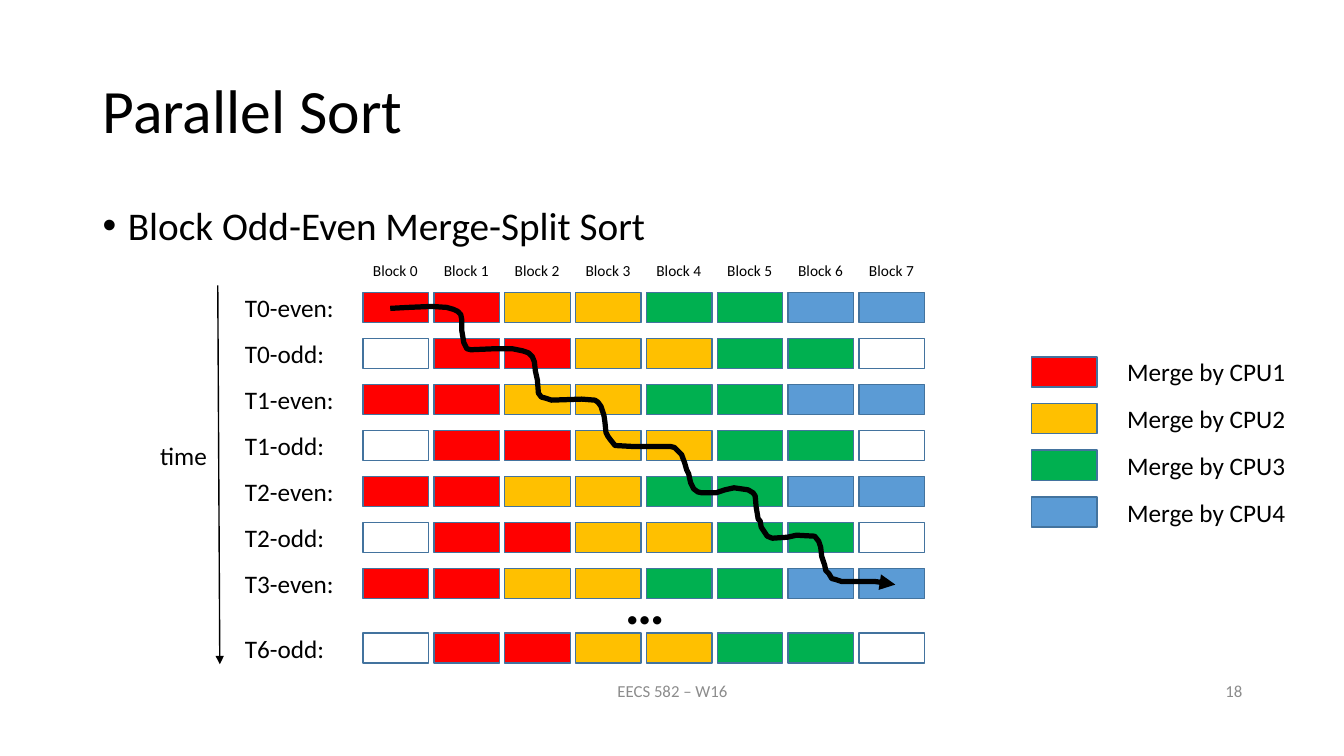
from lxml.etree import SubElement
from pptx import Presentation
from pptx.dml.color import RGBColor
from pptx.enum.shapes import MSO_CONNECTOR as CONNECTOR, MSO_SHAPE as SHAPE
from pptx.enum.text import MSO_ANCHOR as ANCHOR, MSO_AUTO_SIZE as AUTO_SIZE, PP_ALIGN as ALIGN
from pptx.oxml.ns import qn
from pptx.util import Inches, Pt

BLACK, GRAY, WHITE, OUTLINE = "000000", "8C8C8C", "FFFFFF", "43739E"
CPU_COLORS = ["FF0000", "FFC000", "00B050", "5B9BD5"]
BLOCKS = 8
BLOCK_W, BLOCK_H = 0.65, 0.3
BLOCK_PITCH = 4.92 / (BLOCKS - 1)
STEPS = ["T0-even:", "T0-odd:", "T1-even:", "T1-odd:", "T2-even:", "T2-odd:", "T3-even:"]
STEP_PITCH = 2.74 / (len(STEPS) - 1)

# Route of one element from block 0 to block 7, in inches
ROUTE = [
    (3.87, 3.06), (4.05, 3.05), (4.28, 3.04), (4.43, 3.05), (4.5, 3.07), (4.54, 3.09),
    (4.57, 3.12), (4.58, 3.17), (4.58, 3.28), (4.6, 3.4), (4.63, 3.46), (4.67, 3.47),
    (4.91, 3.46), (5.08, 3.46), (5.18, 3.48), (5.24, 3.5), (5.28, 3.54), (5.3, 3.59),
    (5.31, 3.68), (5.33, 3.77), (5.34, 3.9), (5.37, 3.94), (5.41, 3.95), (5.47, 3.97),
    (5.77, 3.96), (5.9, 3.97), (5.93, 3.99), (5.96, 4.03), (5.99, 4.12), (6, 4.19),
    (6.01, 4.29), (6.03, 4.33), (6.06, 4.37), (6.1, 4.42), (6.28, 4.43), (6.65, 4.43),
    (6.69, 4.44), (6.72, 4.47), (6.76, 4.51), (6.79, 4.59), (6.81, 4.66), (6.83, 4.7),
    (6.85, 4.79), (6.88, 4.85), (6.92, 4.88), (6.96, 4.89), (7.1, 4.89), (7.19, 4.86),
    (7.28, 4.84), (7.42, 4.86), (7.47, 4.89), (7.49, 4.92), (7.5, 5.03), (7.52, 5.15),
    (7.54, 5.17), (7.55, 5.23), (7.59, 5.29), (7.61, 5.32), (7.66, 5.34), (7.81, 5.33),
    (7.9, 5.31), (8.08, 5.32), (8.12, 5.37), (8.14, 5.43), (8.15, 5.52), (8.18, 5.61),
    (8.19, 5.66), (8.22, 5.69), (8.25, 5.74), (8.29, 5.75), (8.35, 5.77), (8.68, 5.77),
    (8.83, 5.79), (8.88, 5.8),
]


def rgb(hex_color):
    return RGBColor.from_string(hex_color)


def add_text(shapes, box, text, size, color=BLACK, align=ALIGN.LEFT,
             anchor=ANCHOR.TOP, bold=False, wrap=True, grow=False):
    frame = shapes.add_textbox(*map(Inches, box)).text_frame
    frame.text = text
    frame.word_wrap = wrap
    frame.auto_size = AUTO_SIZE.SHAPE_TO_FIT_TEXT if grow else AUTO_SIZE.NONE
    frame.vertical_anchor = anchor
    paragraph = frame.paragraphs[0]
    paragraph.alignment = align
    font = paragraph.runs[0].font
    font.name, font.size, font.bold = "Calibri", Pt(size), bold
    font.color.rgb = rgb(color)
    return paragraph


def add_block(shapes, left, top, color):
    block = shapes.add_shape(SHAPE.RECTANGLE, *map(Inches, (left, top, BLOCK_W, BLOCK_H)))
    block.shadow.inherit = False
    block.fill.solid()
    block.fill.fore_color.rgb = rgb(color)
    block.line.color.rgb = rgb(OUTLINE)
    block.line.width = Pt(1)


def style_arrow(arrow, width):
    arrow.line.color.rgb = rgb(BLACK)
    arrow.line.width = Pt(width)
    SubElement(arrow.line._get_or_add_ln(), qn("a:tailEnd"), type="triangle")


def add_heading(shapes, left, width):
    title = add_text(shapes, (left, 0.4, width, 1.45), "Parallel Sort", 44, anchor=ANCHOR.MIDDLE)
    title.line_spacing = 0.9
    topic = add_text(shapes, (left, 2, width, 4.76), "Block Odd-Even Merge-Split Sort", 28)
    topic.line_spacing = 0.9
    topic.space_before = Pt(10)
    # Hanging bullet
    properties = topic._p.get_or_add_pPr()
    properties.set("marL", str(Inches(0.25)))
    properties.set("indent", str(Inches(-0.25)))
    SubElement(properties, qn("a:buFont"), typeface="Arial")
    SubElement(properties, qn("a:buChar"), char="•")


def add_step(shapes, left, top, label):
    """One time step: odd steps pair the blocks shifted by one, leaving the ends idle."""
    step = shapes.add_group_shape().shapes
    shift = 1 if "odd" in label else 0
    for number in range(BLOCKS):
        idle = shift and number in (0, BLOCKS - 1)
        color = WHITE if idle else CPU_COLORS[(number - shift) // 2]
        add_block(step, left + number * BLOCK_PITCH, top, color)
    add_text(step, (left - 1.27, top - 0.05, 1.22, 0.4), label, 18, grow=True)


def add_sort_steps(shapes, left, top):
    for number in range(BLOCKS):
        add_text(shapes, (left + number * BLOCK_PITCH, top - 0.36, BLOCK_W, 0.29),
                 f"Block {number}", 11, wrap=False, grow=True)
    for row, label in enumerate(STEPS):
        add_step(shapes, left, top + row * STEP_PITCH, label)
    add_step(shapes, left, top + 3.38, "T6-odd:")
    add_text(shapes, (left + 2.5, top + 2.69, 0.52, 0.77), "…", 40, bold=True, grow=True)


def add_route(shapes):
    start, *rest = [(Inches(x), Inches(y)) for x, y in ROUTE]
    builder = shapes.build_freeform(*start)
    builder.add_line_segments(rest, close=False)
    route = builder.convert_to_shape()
    route.shadow.inherit = False
    route.fill.background()
    style_arrow(route, 3.75)


def add_time_axis(shapes, left, top, height):
    axis = shapes.add_connector(CONNECTOR.STRAIGHT, Inches(left), Inches(top),
                                Inches(left + 0.02), Inches(top + height))
    style_arrow(axis, 1)
    SubElement(axis._element.spPr, qn("a:effectLst"))
    add_text(shapes, (left - 0.67, top + 1.49, 0.67, 0.4), "time", 18, wrap=False, grow=True)


def add_legend(shapes, left, top):
    legend = shapes.add_group_shape().shapes
    for row, color in enumerate(CPU_COLORS):
        row_top = top + row * 1.39 / 3
        add_block(legend, left, row_top, color)
        add_text(legend, (left + 0.85, row_top - 0.05, 1.79, 0.4),
                 f"Merge by CPU{row + 1}", 18, wrap=False, grow=True)


def add_footer(shapes, top):
    add_text(shapes, (4.42, top, 4.5, 0.4), "EECS 582 – W16", 12, GRAY, ALIGN.CENTER, ANCHOR.MIDDLE)
    add_text(shapes, (9.42, top, 3, 0.4), "18", 12, GRAY, ALIGN.RIGHT, ANCHOR.MIDDLE)


def main():
    deck = Presentation()
    deck.slide_width, deck.slide_height = Inches(13.33), Inches(7.5)
    shapes = deck.slides.add_slide(deck.slide_layouts[6]).shapes
    add_heading(shapes, 0.92, 11.5)
    add_footer(shapes, 6.65)
    add_sort_steps(shapes, 3.6, 2.9)
    add_legend(shapes, 10.23, 3.54)
    add_route(shapes)
    add_time_axis(shapes, 2.16, 2.83, 3.76)
    deck.save("out.pptx")


if __name__ == "__main__":
    main()
